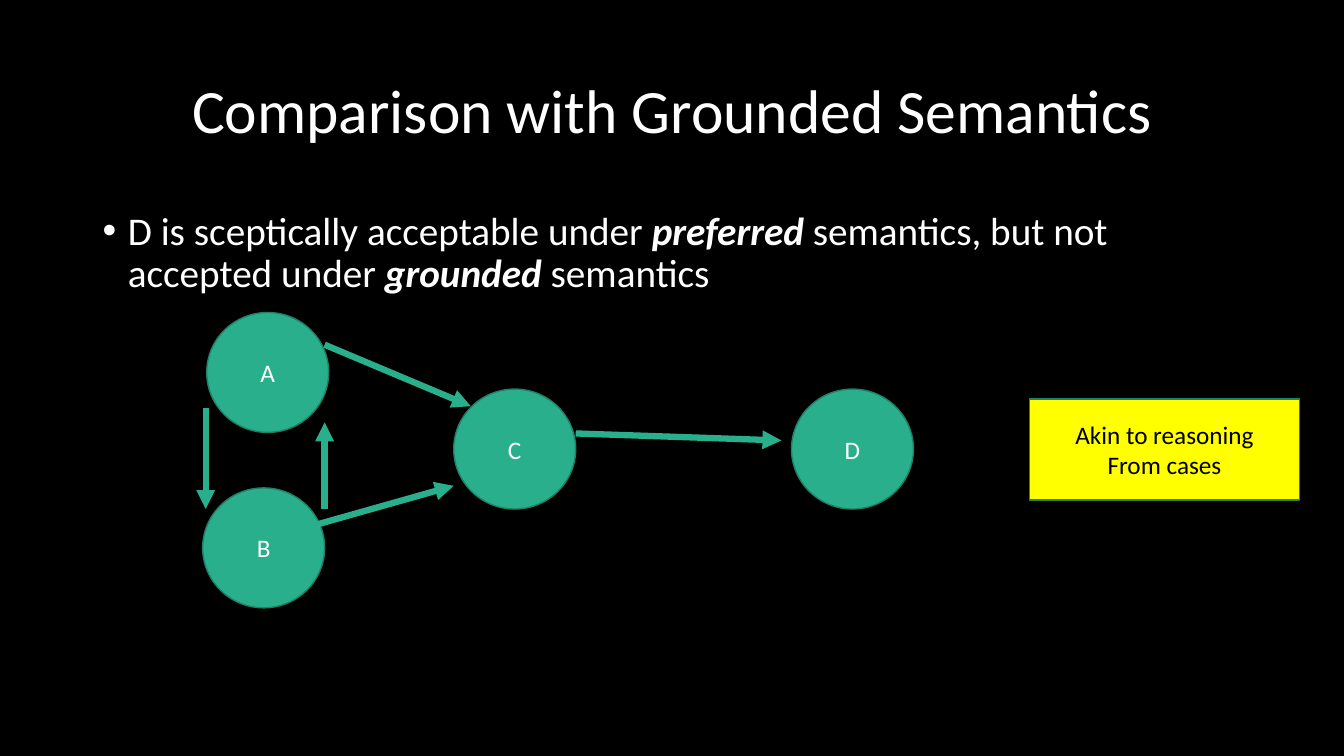
from pptx import Presentation
from pptx.dml.color import RGBColor
from pptx.enum.shapes import MSO_CONNECTOR, MSO_SHAPE
from pptx.enum.text import MSO_ANCHOR, MSO_AUTO_SIZE, PP_ALIGN
from pptx.oxml.ns import qn
from pptx.util import Inches, Pt
from lxml.etree import SubElement

# Content
TITLE = "Comparison with Grounded Semantics"
CLAIM = [  # text, emphasised
    ("D is sceptically acceptable under ", False),
    ("preferred", True),
    (" semantics, but not accepted under ", False),
    ("grounded", True),
    (" semantics", False),
]
NOTE = ["Akin to reasoning", "From cases"]
NODES = {"A": (2.05, 3.1), "B": (2.01, 4.84), "C": (4.5, 3.86), "D": (7.85, 3.86)}
ATTACKS = [  # start, end
    ((2.04, 4.05), (2.04, 5.05)),  # A to B
    ((3.22, 5.05), (3.22, 4.19)),  # B to A
    ((3.22, 3.42), (4.67, 4.03)),  # A to C
    ((3.12, 5.21), (4.5, 4.82)),   # B to C
    ((5.71, 4.3), (7.75, 4.37)),   # C to D
]

# Layout in inches
TITLE_BOX = (0.92, 0.4, 11.5, 1.45)
CLAIM_BOX = (0.92, 2.05, 11.5, 4.76)
NOTE_BOX = (10.21, 3.96, 2.68, 1)
NODE_SIZE = (1.21, 1.19)

THEME = {
    "font": "Calibri",
    "back": RGBColor(0, 0, 0),
    "light": RGBColor(255, 255, 255),
    "dark": RGBColor(0, 0, 0),
    "node": RGBColor(0x29, 0xAF, 0x8C),
    "edge": RGBColor(0x1E, 0x81, 0x68),
    "note": RGBColor(255, 255, 0),
    "title": Pt(44),
    "body": Pt(28),
    "label": Pt(18),
    "outline": Pt(1),
    "arrow": Pt(4.5),
}


def apply(target, **values):
    for name, value in values.items():
        setattr(target, name, value)


def inches(values):
    return [Inches(value) for value in values]


def write(para, text, size, color, **style):
    run = para.add_run()
    run.text = text
    apply(run.font, name=THEME["font"], size=THEME[size], **style)
    run.font.color.rgb = THEME[color]


def add_block(slide, kind, box, fill, lines, color):
    block = slide.shapes.add_shape(kind, *inches(box))
    block.shadow.inherit = False
    block.fill.solid()
    block.fill.fore_color.rgb = THEME[fill]
    block.line.color.rgb = THEME["edge"]
    block.line.width = THEME["outline"]
    frame = block.text_frame
    apply(frame, word_wrap=True, vertical_anchor=MSO_ANCHOR.MIDDLE)
    for i, line in enumerate(lines):
        para = frame.add_paragraph() if i else frame.paragraphs[0]
        para.alignment = PP_ALIGN.CENTER
        write(para, line, "label", color)


def add_arrow(slide, start, end):
    arrow = slide.shapes.add_connector(MSO_CONNECTOR.STRAIGHT, *inches(start + end))
    arrow.line.color.rgb = THEME["node"]
    arrow.line.width = THEME["arrow"]
    SubElement(arrow.line._get_or_add_ln(), qn("a:tailEnd"), type="triangle")
    SubElement(arrow._element.spPr, qn("a:effectLst"))


def add_title(slide):
    title = slide.shapes.title
    apply(title, **dict(zip(("left", "top", "width", "height"), inches(TITLE_BOX))))
    apply(title.text_frame, word_wrap=True, auto_size=MSO_AUTO_SIZE.NONE,
          vertical_anchor=MSO_ANCHOR.MIDDLE)
    para = title.text_frame.paragraphs[0]
    apply(para, alignment=PP_ALIGN.CENTER, line_spacing=0.9)
    write(para, TITLE, "title", "light")


def add_claim(slide):
    frame = slide.shapes.add_textbox(*inches(CLAIM_BOX)).text_frame
    frame.word_wrap = True
    para = frame.paragraphs[0]
    apply(para, line_spacing=0.9, space_before=Pt(10))
    props = para._p.get_or_add_pPr()
    props.set("marL", str(Inches(0.25)))
    props.set("indent", str(Inches(-0.25)))
    SubElement(props, qn("a:buFont"), typeface="Arial")
    SubElement(props, qn("a:buChar"), char="•")
    for text, strong in CLAIM:
        write(para, text, "body", "light", bold=strong, italic=strong)


def main():
    deck = Presentation()
    apply(deck, slide_width=Inches(13.33), slide_height=Inches(7.5))
    slide = deck.slides.add_slide(deck.slide_layouts[5])
    slide.background.fill.solid()
    slide.background.fill.fore_color.rgb = THEME["back"]

    # Title and claim
    add_title(slide)
    add_claim(slide)

    # Argument graph
    for name, place in NODES.items():
        add_block(slide, MSO_SHAPE.OVAL, place + NODE_SIZE, "node", [name], "light")
    for start, end in ATTACKS:
        add_arrow(slide, start, end)

    # Side note
    add_block(slide, MSO_SHAPE.RECTANGLE, NOTE_BOX, "note", NOTE, "dark")
    deck.save("out.pptx")


if __name__ == "__main__":
    main()
